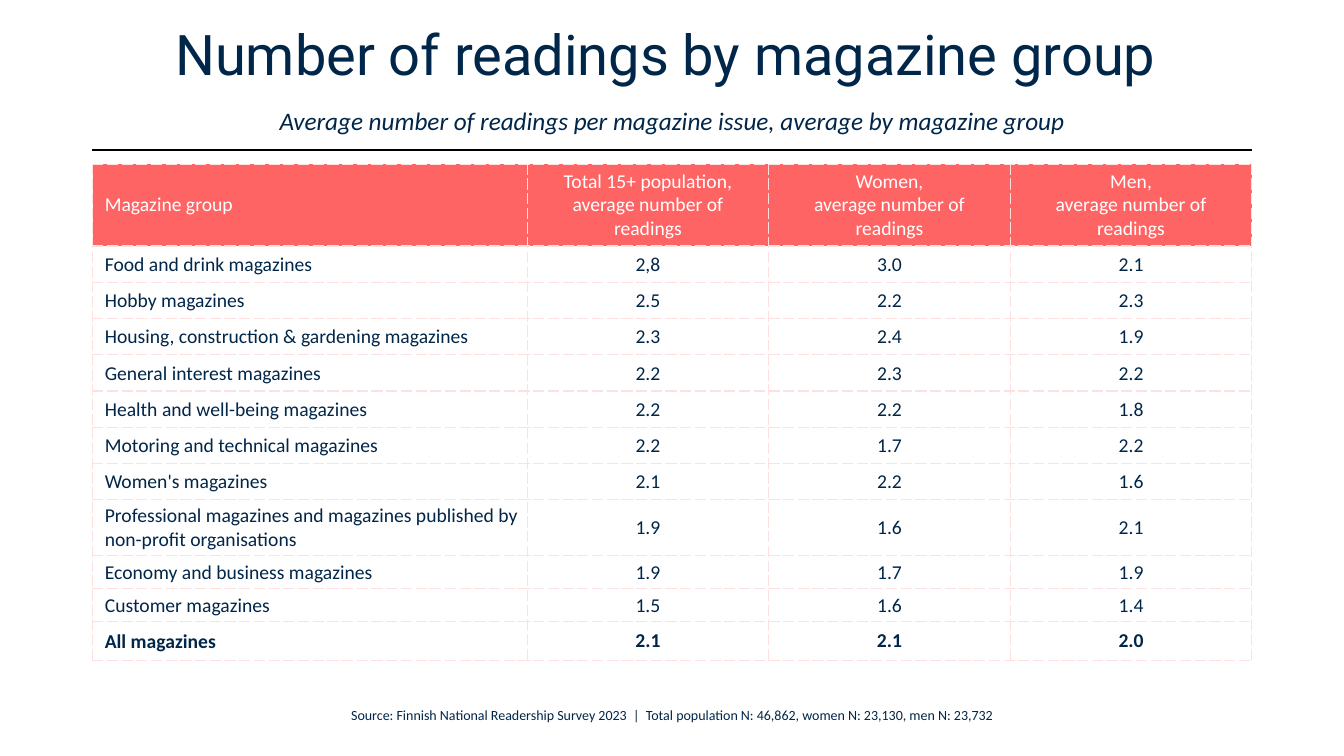
from dataclasses import dataclass

from lxml import etree
from pptx import Presentation
from pptx.dml import color
from pptx.enum import shapes, text
from pptx.oxml import ns
from pptx.util import Pt

NAVY, CORAL, PINK, WHITE, BLACK = "002649", "FF6464", "FFE0E0", "FFFFFF", "000000"
LEFT, WIDTH = 66.24, 828
COLUMN_WIDTHS = [310.32, 172.56, 172.56, 172.56]
ROW_HEIGHTS = [56.16] + [25.92] * 7 + [39.6, 23.76, 23.76, 27.36]
ROOMY = (8.64, 3.6, 8.64, 3.6)
TIGHT = (0.72, 0.72, 0.72, 0)
TIGHT_LABEL = (8.64, 0.72, 0.72, 0)
SIDES = ("left", "top", "right", "bottom")


@dataclass
class Row:
    label: str
    values: tuple[str, str, str]
    ink: str = NAVY
    fill: str | None = None
    bold: bool = False
    label_insets: tuple = TIGHT_LABEL
    value_insets: tuple = TIGHT


MEASURE = "average number of readings"
ROWS = [
    Row("Magazine group",
        tuple(f"{group},\n{MEASURE}" for group in ("Total 15+ population", "Women", "Men")),
        ink=WHITE, fill=CORAL, label_insets=ROOMY, value_insets=ROOMY),
    Row("Food and drink magazines", ("2,8", "3.0", "2.1")),
    Row("Hobby magazines", ("2.5", "2.2", "2.3")),
    Row("Housing, construction & gardening magazines", ("2.3", "2.4", "1.9")),
    Row("General interest magazines", ("2.2", "2.3", "2.2")),
    Row("Health and well-being magazines", ("2.2", "2.2", "1.8")),
    Row("Motoring and technical magazines", ("2.2", "1.7", "2.2")),
    Row("Women's magazines", ("2.1", "2.2", "1.6")),
    Row("Professional magazines and magazines published by non-profit organisations",
        ("1.9", "1.6", "2.1")),
    Row("Economy and business magazines", ("1.9", "1.7", "1.9")),
    Row("Customer magazines", ("1.5", "1.6", "1.4")),
    Row("All magazines", ("2.1", "2.1", "2.0"), bold=True, value_insets=ROOMY),
]


def rgb(hex_code: str) -> color.RGBColor:
    return color.RGBColor.from_string(hex_code)


def add_span(para, words: str, ink: str, **formats) -> None:
    span = para.add_run()
    span.text = words
    span.font.color.rgb = rgb(ink)
    for name, value in formats.items():
        setattr(span.font, name, value)


def set_borders(cell) -> None:
    properties = cell._tc.get_or_add_tcPr()
    for tag in ("a:lnL", "a:lnR", "a:lnT", "a:lnB"):
        line = etree.SubElement(properties, ns.qn(tag), w=str(Pt(1)))
        solid = etree.SubElement(line, ns.qn("a:solidFill"))
        etree.SubElement(solid, ns.qn("a:srgbClr"), val=PINK)
        etree.SubElement(line, ns.qn("a:prstDash"), val="sysDash")


def fill_cell(cell, words: str, row: Row, insets: tuple, align) -> None:
    set_borders(cell)
    if row.fill:
        cell.fill.solid()
        cell.fill.fore_color.rgb = rgb(row.fill)
    else:
        cell.fill.background()
    cell.vertical_anchor = text.MSO_ANCHOR.MIDDLE
    for side, inset in zip(SIDES, insets):
        setattr(cell, f"margin_{side}", Pt(inset))
    for index, line in enumerate(words.split("\n")):
        para = cell.text_frame.add_paragraph() if index else cell.text_frame.paragraphs[0]
        para.alignment = align
        add_span(para, line, row.ink, size=Pt(14), name="Calibri", bold=row.bold)


def add_rule(page) -> None:
    y = Pt(107.28)
    rule = page.shapes.add_connector(
        shapes.MSO_CONNECTOR.STRAIGHT, Pt(65.52), y, Pt(894.24), y)
    rule.line.color.rgb = rgb(BLACK)
    rule.line.width = Pt(1)
    etree.SubElement(rule._element.spPr, ns.qn("a:effectLst"))


def write_title(page) -> None:
    box = page.shapes.title
    place = {"left": LEFT, "top": 23.04, "width": WIDTH, "height": 77.04}
    for name, value in place.items():
        setattr(box, name, Pt(value))
    frame = box.text_frame
    frame.auto_size = text.MSO_AUTO_SIZE.NONE
    frame.vertical_anchor = text.MSO_ANCHOR.MIDDLE
    frame.word_wrap = True
    para = frame.paragraphs[0]
    formats = {"alignment": text.PP_ALIGN.CENTER, "line_spacing": Pt(35),
               "space_after": Pt(18)}
    for name, value in formats.items():
        setattr(para, name, value)
    add_span(para, "Number of readings by magazine group ", NAVY, size=Pt(40), name="Roboto")
    para.add_line_break()
    add_span(para, "Average number of readings per magazine issue, average by magazine group",
             NAVY, size=Pt(18), name="Calibri", italic=True)


def add_readings_table(page) -> None:
    table = page.shapes.add_table(
        len(ROWS), len(COLUMN_WIDTHS), Pt(LEFT), Pt(117.36),
        Pt(WIDTH), Pt(sum(ROW_HEIGHTS))).table
    table.first_row = table.horz_banding = False
    for column, width in zip(table.columns, COLUMN_WIDTHS):
        column.width = Pt(width)
    for index, (row, height) in enumerate(zip(ROWS, ROW_HEIGHTS)):
        table.rows[index].height = Pt(height)
        fill_cell(table.cell(index, 0), row.label, row, row.label_insets, text.PP_ALIGN.LEFT)
        for column, value in enumerate(row.values, start=1):
            fill_cell(table.cell(index, column), value, row, row.value_insets,
                      text.PP_ALIGN.CENTER)


def add_source(page) -> None:
    box = page.shapes.add_textbox(Pt(218.88), Pt(501.12), Pt(522), Pt(19.44))
    box.text_frame.word_wrap = False
    box.text_frame.auto_size = text.MSO_AUTO_SIZE.SHAPE_TO_FIT_TEXT
    para = box.text_frame.paragraphs[0]
    para.alignment = text.PP_ALIGN.CENTER
    add_span(para, "Source: Finnish National Readership Survey 2023  |  "
             "Total population N: 46,862, women N: 23,130, men N: 23,732",
             NAVY, size=Pt(10), name="Calibri")


def main() -> None:
    deck = Presentation()
    deck.slide_width, deck.slide_height = Pt(960), Pt(540)
    page = deck.slides.add_slide(deck.slide_layouts[5])
    # Heading
    write_title(page)
    add_rule(page)
    # Readings by group
    add_readings_table(page)
    # Footer
    add_source(page)
    deck.save("out.pptx")


if __name__ == "__main__":
    main()
